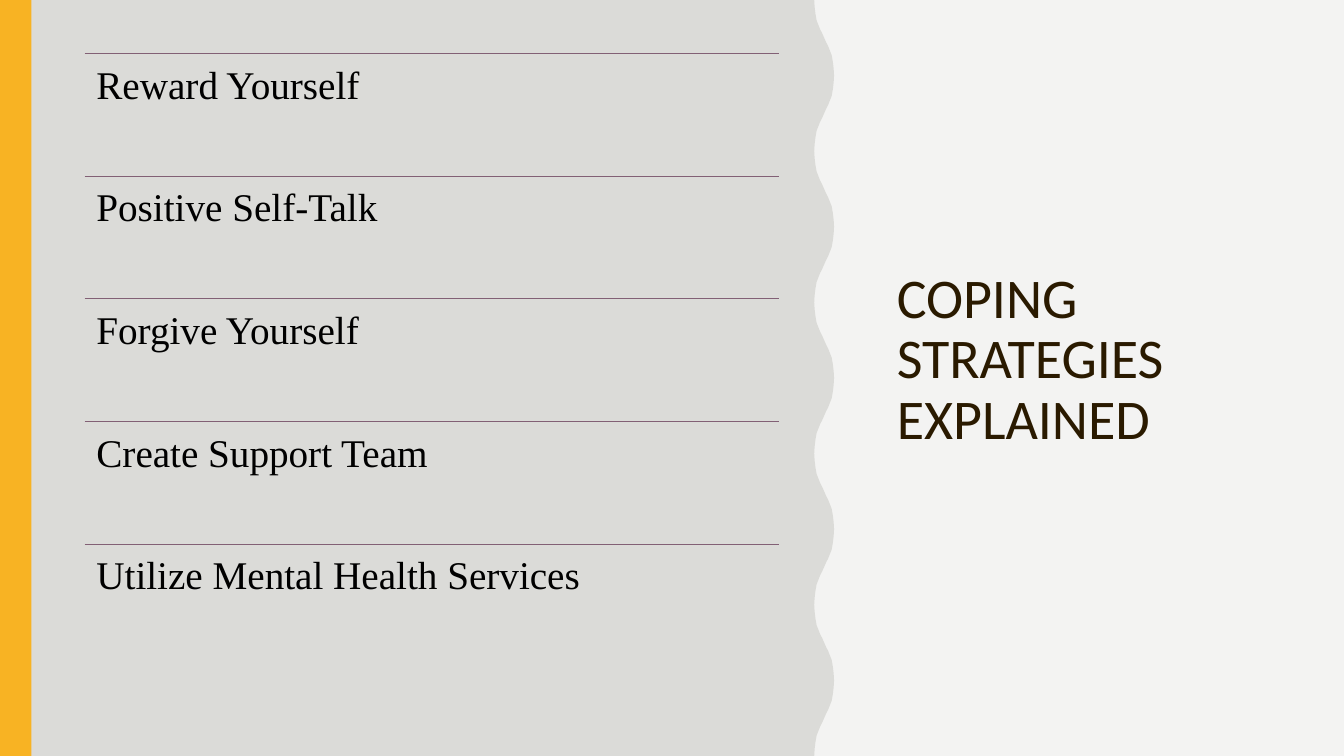
"""Build a slide that lists five coping strategies beside a wavy panel."""
import pptx
import pptx.dml.color
import pptx.enum.shapes
import pptx.enum.text
import pptx.oxml.xmlchemy
import pptx.util
from lxml import etree
from pptx.util import Cm

TITLE = ["COPING STRATEGIES", "EXPLAINED"]
STRATEGIES = [
    "Reward Yourself",
    "Positive Self-Talk",
    "Forgive Yourself",
    "Create Support Team",
    "Utilize Mental Health Services",
]
WAVE_PROFILE = [
    (0, 0), (0.02, 0.09), (0.06, 0.18), (0.12, 0.27), (0.21, 0.33),
    (0.3, 0.39), (0.4, 0.44), (0.5, 0.5), (0.6, 0.56), (0.7, 0.61),
    (0.79, 0.67), (0.88, 0.73), (0.94, 0.82), (0.98, 0.91),
]

PAPER = pptx.dml.color.RGBColor(0xF3, 0xF3, 0xF2)
PANEL = pptx.dml.color.RGBColor(0xDB, 0xDB, 0xD8)
AMBER = pptx.dml.color.RGBColor(0xF8, 0xB3, 0x23)
BROWN = pptx.dml.color.RGBColor(0x2A, 0x1A, 0x00)
MAUVE = pptx.dml.color.RGBColor(0x82, 0x60, 0x75)
BLACK = pptx.dml.color.RGBColor(0, 0, 0)

PAGE_WIDTH, PAGE_HEIGHT = Cm(33.87), Cm(19.05)
STRIPE_WIDTH = Cm(0.79)
WAVE_LEFT, WAVE_DEPTH, HALF_WAVES = Cm(20.52), Cm(0.5), 10
LIST_LEFT, LIST_TOP, LIST_WIDTH = Cm(2.13), Cm(1.35), Cm(17.5)
ROW_HEIGHT = Cm(3.09)


def paint(shape, color):
    """Give a shape a plain fill without outline or shadow."""
    shape.shadow.inherit = False
    shape.fill.solid()
    shape.fill.fore_color.rgb = color
    shape.line.fill.background()


def add_wavy_panel(page):
    """Draw the panel whose right edge swings in equal half waves."""
    half_height = PAGE_HEIGHT / HALF_WAVES
    edge = []
    for half in range(HALF_WAVES):
        for across, down in WAVE_PROFILE:
            reach = across if half % 2 == 0 else 1 - across
            edge.append((WAVE_LEFT + round(reach * WAVE_DEPTH),
                         round((half + down) * half_height)))
    edge += [(WAVE_LEFT, PAGE_HEIGHT), (0, PAGE_HEIGHT)]
    outline = page.shapes.build_freeform(0, 0)
    outline.add_line_segments(edge, close=True)
    paint(outline.convert_to_shape(), PANEL)


def add_text(page, lines, left, top, width, height, *, font, size, color,
             anchor, inset_x, inset_y):
    """Add a wrapped text box with one paragraph for each line."""
    box = page.shapes.add_textbox(left, top, width, height)
    frame = box.text_frame
    frame.word_wrap = True
    frame.vertical_anchor = anchor
    frame.margin_left = frame.margin_right = inset_x
    frame.margin_top = frame.margin_bottom = inset_y
    frame.text = "\n".join(lines)
    for para in frame.paragraphs:
        para.line_spacing = 0.9
        for span in para.runs:
            span.font.name = font
            span.font.size = pptx.util.Pt(size)
            span.font.color.rgb = color


def add_rule(page, top):
    """Draw the thin line above a strategy."""
    rule = page.shapes.add_connector(
        pptx.enum.shapes.MSO_CONNECTOR.STRAIGHT,
        LIST_LEFT, top, LIST_LEFT + LIST_WIDTH, top)
    rule.line.color.rgb = MAUVE
    rule.line.width = pptx.util.Pt(0.75)
    properties = rule.element.spPr
    etree.SubElement(properties, pptx.oxml.ns.qn("a:effectLst"))


def main():
    """Assemble and save the deck."""
    deck = pptx.Presentation()
    deck.slide_width, deck.slide_height = PAGE_WIDTH, PAGE_HEIGHT
    page = deck.slides.add_slide(deck.slide_layouts[6])
    page.background.fill.solid()
    page.background.fill.fore_color.rgb = PAPER

    add_wavy_panel(page)
    stripe = page.shapes.add_shape(
        pptx.enum.shapes.MSO_SHAPE.RECTANGLE, 0, 0, STRIPE_WIDTH, PAGE_HEIGHT)
    paint(stripe, AMBER)

    add_text(page, TITLE, Cm(22.35), LIST_TOP, Cm(10.16), Cm(15.47),
             font="Calibri", size=40, color=BROWN,
             anchor=pptx.enum.text.MSO_ANCHOR.MIDDLE,
             inset_x=Cm(0.25), inset_y=Cm(0.13))
    for row, strategy in enumerate(STRATEGIES):
        top = LIST_TOP + row * ROW_HEIGHT
        add_rule(page, top)
        add_text(page, [strategy], LIST_LEFT, top, LIST_WIDTH, ROW_HEIGHT,
                 font="Times New Roman", size=28, color=BLACK,
                 anchor=pptx.enum.text.MSO_ANCHOR.TOP,
                 inset_x=Cm(0.3), inset_y=Cm(0.3))
    deck.save("out.pptx")


if __name__ == "__main__":
    main()
